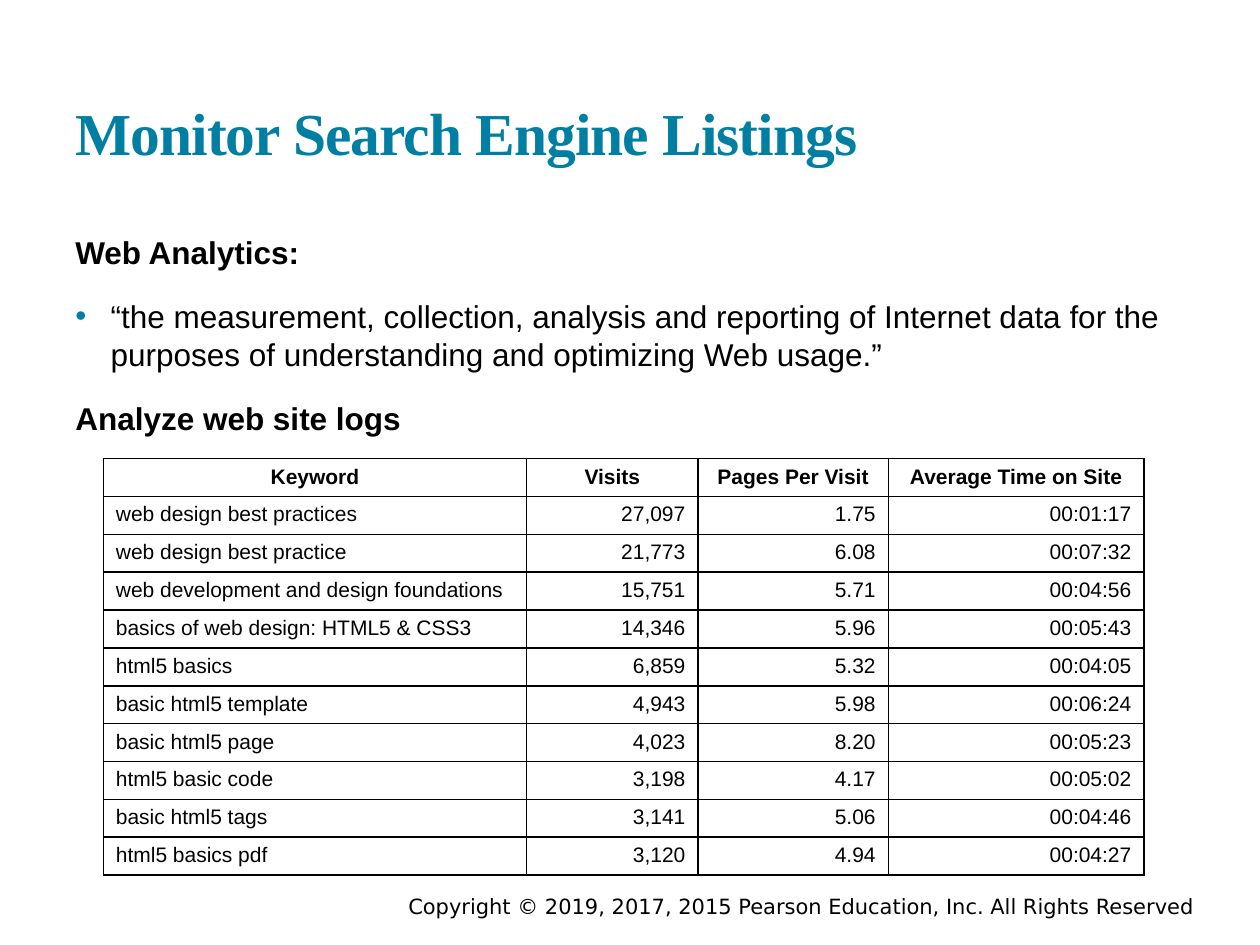
import pptx
import pptx.util
import pptx.dml.color
import pptx.enum.text
import pptx.oxml
import pptx.oxml.ns
from dataclasses import dataclass

Inches, Pt = pptx.util.Inches, pptx.util.Pt
ALIGN = pptx.enum.text.PP_ALIGN
ANCHOR = pptx.enum.text.MSO_ANCHOR


@dataclass(frozen=True)
class Theme:
    accent: str = "007FA3"
    ink: str = "000000"
    heading_font: str = "Times New Roman"
    body_font: str = "Arial"
    footer_font: str = "DejaVu Sans"
    title_size: int = 34
    body_size: int = 18
    small_size: int = 12


theme = Theme()


def add_text_box(s, left, top, width, height, inset_y, anchor):
    tf = s.shapes.add_textbox(Inches(left), Inches(top), Inches(width), Inches(height)).text_frame
    tf.word_wrap = True
    tf.margin_top = tf.margin_bottom = Inches(inset_y)
    tf.vertical_anchor = anchor
    return tf


def style(p, size, font=theme.body_font, color=theme.ink, bold=False):
    for r in p.runs:
        r.font.size = Pt(size)
        r.font.name = font
        r.font.bold = bold
        r.font.color.rgb = pptx.dml.color.RGBColor.from_string(color)


prs = pptx.Presentation()
prs.slide_width, prs.slide_height = Inches(10), Inches(7.5)
s = prs.slides.add_slide(prs.slide_layouts[6])

# Copyright line
tf = add_text_box(s, 2.97, 7.07, 6.61, 0.25, 0.05, ANCHOR.MIDDLE)
tf.text = "Copyright © 2019, 2017, 2015 Pearson Education, Inc. All Rights Reserved"
p = tf.paragraphs[0]
p.alignment = ALIGN.RIGHT
style(p, theme.small_size, theme.footer_font)

# Title
tf = add_text_box(s, 0.5, 0.66, 9, 0.77, 0.1, ANCHOR.BOTTOM)
tf.text = "Monitor Search Engine Listings"
p = tf.paragraphs[0]
style(p, theme.title_size, theme.heading_font, theme.accent, True)
p.runs[0].font._element.set("spc", "-50")

# Body: bold headings around one bulleted quotation
body = [
    ("Web Analytics:", False),
    ("“the measurement, collection, analysis and reporting of Internet data for the "
     "purposes of understanding and optimizing Web usage.”", True),
    ("Analyze web site logs", False),
]
tf = add_text_box(s, 0.5, 1.75, 9, 1.83, 0.1, ANCHOR.TOP)
for i, (text, bulleted) in enumerate(body):
    p = tf.add_paragraph() if i else tf.paragraphs[0]
    p.text = text
    if i:
        p.space_before = Pt(15)
    if bulleted:
        p.level = 1
        pPr = p._p.get_or_add_pPr()
        pPr.set("marL", str(Inches(0.28)))
        pPr.set("indent", str(Inches(-0.28)))
        ns = pptx.oxml.ns.nsdecls("a")
        for xml in (f'<a:buClr {ns}><a:srgbClr val="{theme.accent}"/></a:buClr>',
                    f'<a:buFont {ns} typeface="{theme.body_font}"/>',
                    f'<a:buChar {ns} char="•"/>'):
            pPr.append(pptx.oxml.parse_xml(xml))
    style(p, theme.body_size, bold=not bulleted)

# Keyword table
rows = [
    ("Keyword", "Visits", "Pages Per Visit", "Average Time on Site"),
    ("web design best practices", "27,097", "1.75", "00:01:17"),
    ("web design best practice", "21,773", "6.08", "00:07:32"),
    ("web development and design foundations", "15,751", "5.71", "00:04:56"),
    ("basics of web design: HTML5 & CSS3", "14,346", "5.96", "00:05:43"),
    ("html5 basics", "6,859", "5.32", "00:04:05"),
    ("basic html5 template", "4,943", "5.98", "00:06:24"),
    ("basic html5 page", "4,023", "8.20", "00:05:23"),
    ("html5 basic code", "3,198", "4.17", "00:05:02"),
    ("basic html5 tags", "3,141", "5.06", "00:04:46"),
    ("html5 basics pdf", "3,120", "4.94", "00:04:27"),
]
widths = [3.36, 1.36, 1.51, 2.03]
row_height = 0.3
table = s.shapes.add_table(len(rows), len(widths), Inches(0.82), Inches(3.64),
                           Inches(sum(widths)), Inches(row_height * len(rows))).table
table.first_row = table.horz_banding = False
for column, width in zip(table.columns, widths):
    column.width = Inches(width)

for i, row in enumerate(rows):
    table.rows[i].height = Inches(row_height)
    for j, text in enumerate(row):
        cell = table.cell(i, j)
        cell.text = text
        p = cell.text_frame.paragraphs[0]
        if i == 0:
            p.alignment = ALIGN.CENTER
            cell.vertical_anchor = ANCHOR.MIDDLE
        else:
            p.alignment = ALIGN.RIGHT if j else ALIGN.LEFT
        style(p, theme.small_size, bold=i == 0)
        # Borders come before the fill in the cell properties
        tcPr = cell._tc.get_or_add_tcPr()
        for side in "LRTB":
            tcPr.append(pptx.oxml.parse_xml(
                f'<a:ln{side} {pptx.oxml.ns.nsdecls("a")} w="{Pt(1)}"><a:solidFill>'
                f'<a:srgbClr val="{theme.ink}"/></a:solidFill></a:ln{side}>'))
        cell.fill.background()

prs.save("out.pptx")
